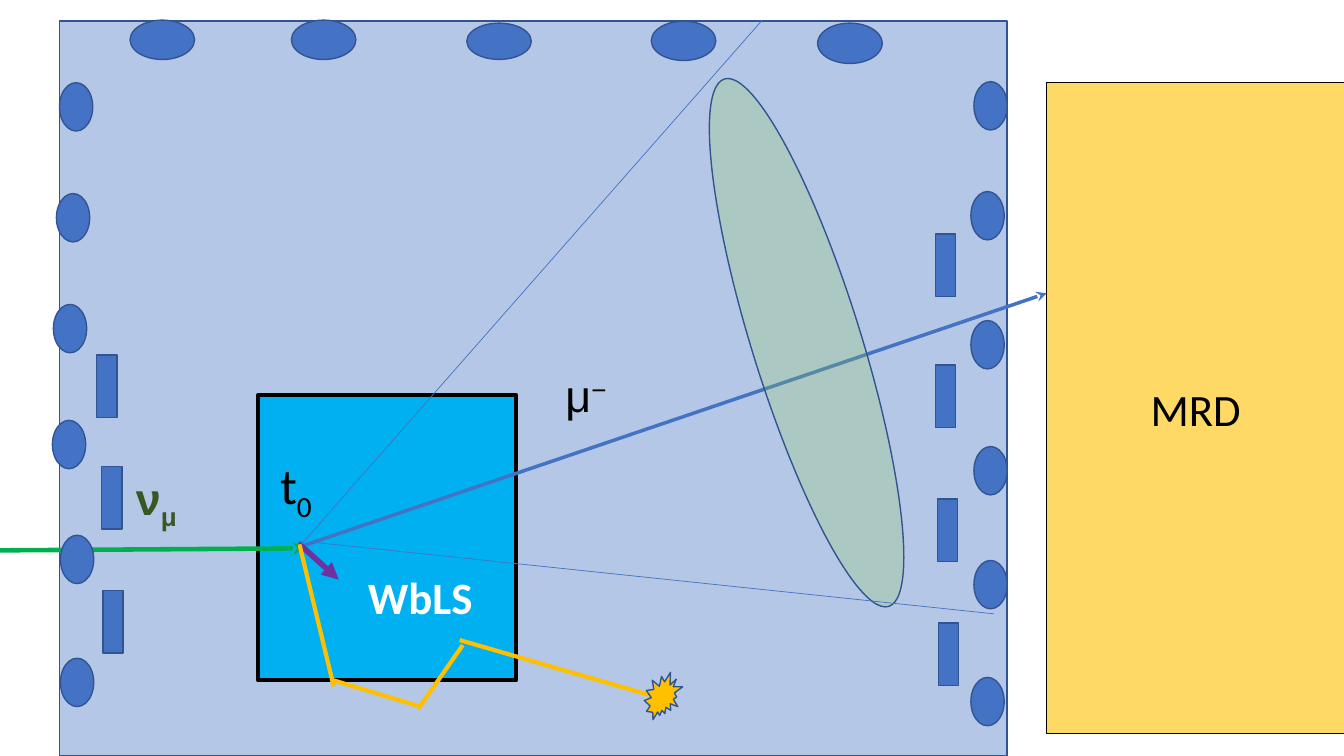
from lxml import etree
from pptx import Presentation
from pptx import util as u
from pptx.dml.color import RGBColor
from pptx.enum import shapes, text
from pptx.oxml import ns

COLORS = {
    "black": "000000", "white": "FFFFFF", "tank": "B4C7E7", "outline": "325491",
    "detector": "4472C4", "vessel": "00B0F0", "range_detector": "FFD966",
    "neutrino": "00B050", "neutrino_label": "385723", "proton": "7030A0",
    "neutron": "FFC000", "ring": "92D050",
}
SHAPE = shapes.MSO_SHAPE


class DetectorSlide:
    def __init__(self, presentation):
        self.slide = presentation.slides.add_slide(presentation.slide_layouts[6])

    def color(self, name):
        return RGBColor.from_string(COLORS[name])

    def shape(self, kind, left, top, width, height, fill="detector",
              line="outline", line_width=1, rotation=0, opacity=None):
        shape = self.slide.shapes.add_shape(
            kind, *map(u.Inches, (left, top, width, height)))
        shape.shadow.inherit = False
        shape.rotation = rotation
        shape.fill.solid()
        shape.fill.fore_color.rgb = self.color(fill)
        shape.line.color.rgb = self.color(line)
        shape.line.width = u.Pt(line_width)
        if opacity is not None:
            fill_color = shape._element.spPr.find(ns.qn("a:solidFill"))[0]
            etree.SubElement(fill_color, ns.qn("a:alpha"), val=str(opacity * 1000))
        return shape

    def line(self, start, end, color, width, arrow=None):
        points = map(u.Inches, (*start, *end))
        connector = self.slide.shapes.add_connector(
            shapes.MSO_CONNECTOR.STRAIGHT, *points)
        connector.line.color.rgb = self.color(color)
        connector.line.width = u.Pt(width)
        properties = connector._element.spPr
        if arrow:
            etree.SubElement(properties.find(ns.qn("a:ln")),
                             ns.qn("a:tailEnd"), type=arrow)
        etree.SubElement(properties, ns.qn("a:effectLst"))

    def add_run(self, paragraph, content, size, color, font, bold=False, baseline=0):
        run = paragraph.add_run()
        run.text = content
        run.font.size = u.Pt(size)
        run.font.name = font
        run.font.bold = bold
        run.font.color.rgb = self.color(color)
        if baseline:
            run._r.get_or_add_rPr().set("baseline", str(baseline * 1000))

    def label(self, left, top, width, height, content, script="", baseline=0,
              size=32, color="black", font="Calibri", bold=False, wrap=False):
        box = self.slide.shapes.add_textbox(
            *map(u.Inches, (left, top, width, height)))
        box.text_frame.word_wrap = wrap
        box.text_frame.auto_size = text.MSO_AUTO_SIZE.SHAPE_TO_FIT_TEXT
        paragraph = box.text_frame.paragraphs[0]
        self.add_run(paragraph, content, size, color, font, bold)
        if script:
            self.add_run(paragraph, script, size, color, font, bold, baseline)

    def block_text(self, shape, content, size, color, font):
        shape.text_frame.vertical_anchor = text.MSO_ANCHOR.MIDDLE
        paragraph = shape.text_frame.paragraphs[0]
        paragraph.alignment = text.PP_ALIGN.CENTER
        self.add_run(paragraph, content, size, color, font)


def main():
    presentation = Presentation()
    presentation.slide_width = u.Inches(13.33)
    presentation.slide_height = u.Inches(7.5)
    detector = DetectorSlide(presentation)

    range_detector = detector.shape(SHAPE.RECTANGLE, 10.38, 0.82, 2.96, 6.46,
                                    "range_detector", "black")
    detector.block_text(range_detector, "MRD", 32, "black", "Calibri")
    detector.shape(SHAPE.RECTANGLE, 0.59, 0.21, 9.4, 7.29, "tank")
    detector.shape(SHAPE.RECTANGLE, 2.56, 3.92, 2.56, 2.83, "vessel", "black", 3)

    detector.line((0, 5.46), (3.03, 5.44), "neutrino", 3.25, "stealth")
    detector.label(1.25, 4.62, 0.61, 0.64, "ν", "μ", -25,
                   color="neutrino_label", font="Arial", bold=True)
    detector.line((2.96, 5.43), (10.38, 2.91), "detector", 2.5, "stealth")
    detector.label(5.51, 3.6, 1.34, 0.64, "μ", "−", 30, font="Arial", wrap=True)
    detector.line((2.96, 5.39), (3.36, 5.75), "proton", 4, "triangle")

    neutron_steps = [
        ((4.56, 6.35), (6.46, 6.9)),
        ((4.15, 7.03), (4.59, 6.4)),
        ((3.31, 6.75), (4.17, 7.01)),
        ((2.97, 5.4), (3.31, 6.81)),
    ]
    for start, end in neutron_steps:
        detector.line(start, end, "neutron", 3)
    detector.shape(SHAPE.EXPLOSION2, 6.39, 6.67, 0.38, 0.47, "neutron")

    right_tubes = [(9.66, 0.81), (9.63, 1.9), (9.63, 3.18),
                   (9.66, 4.43), (9.66, 5.56), (9.63, 6.72)]
    left_tubes = [(0.59, 0.82), (0.56, 1.92), (0.53, 3.02),
                  (0.52, 4.17), (0.6, 5.31), (0.6, 6.53)]
    for left, top in right_tubes + left_tubes:
        detector.shape(SHAPE.OVAL, left, top, 0.33, 0.48)
    top_tubes = [(1.29, 0.2, 0.39), (2.89, 0.2, 0.39), (4.63, 0.23, 0.36),
                 (6.46, 0.21, 0.39), (8.11, 0.23, 0.4)]
    for left, top, height in top_tubes:
        detector.shape(SHAPE.OVAL, left, top, 0.64, height)

    detector.shape(SHAPE.OVAL, 7.46, 0.66, 1.08, 5.48, "ring",
                   rotation=342.7, opacity=24)
    detector.line((2.99, 5.4), (7.56, 0.2), "detector", 0.5)
    detector.line((3.11, 5.38), (9.86, 6.09), "detector", 0.5)
    detector.label(2.68, 4.46, 0.54, 0.71, "t", "0", -25, size=36)

    photosensors = [(0.96, 3.52), (1.01, 4.63), (1.02, 5.86), (9.28, 2.32),
                    (9.28, 3.62), (9.3, 4.95), (9.31, 6.18)]
    for left, top in photosensors:
        detector.shape(SHAPE.RECTANGLE, left, top, 0.2, 0.62)
    detector.label(3.55, 5.6, 1.25, 0.64, "WbLS", color="white", bold=True)

    presentation.save("out.pptx")


if __name__ == "__main__":
    main()
